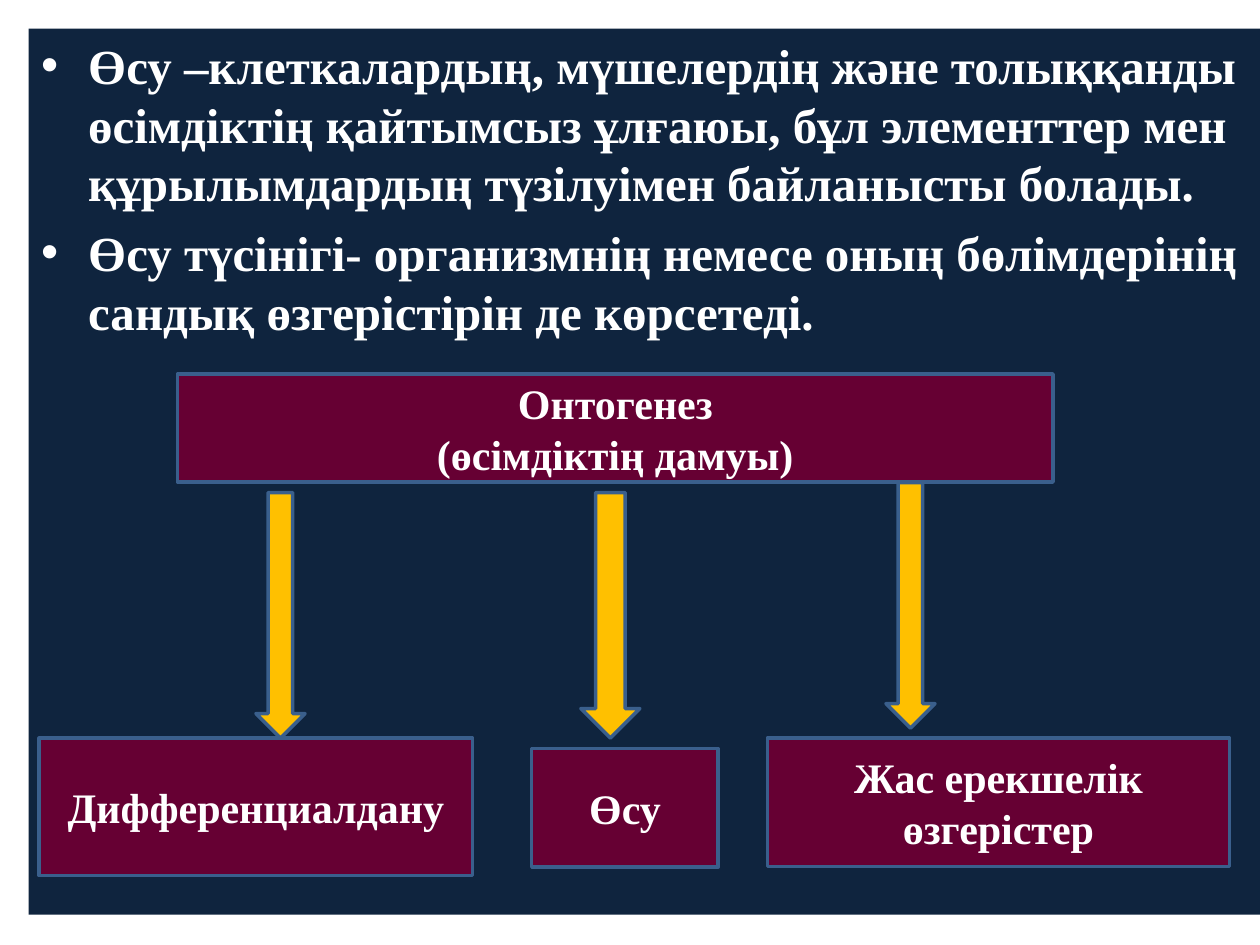
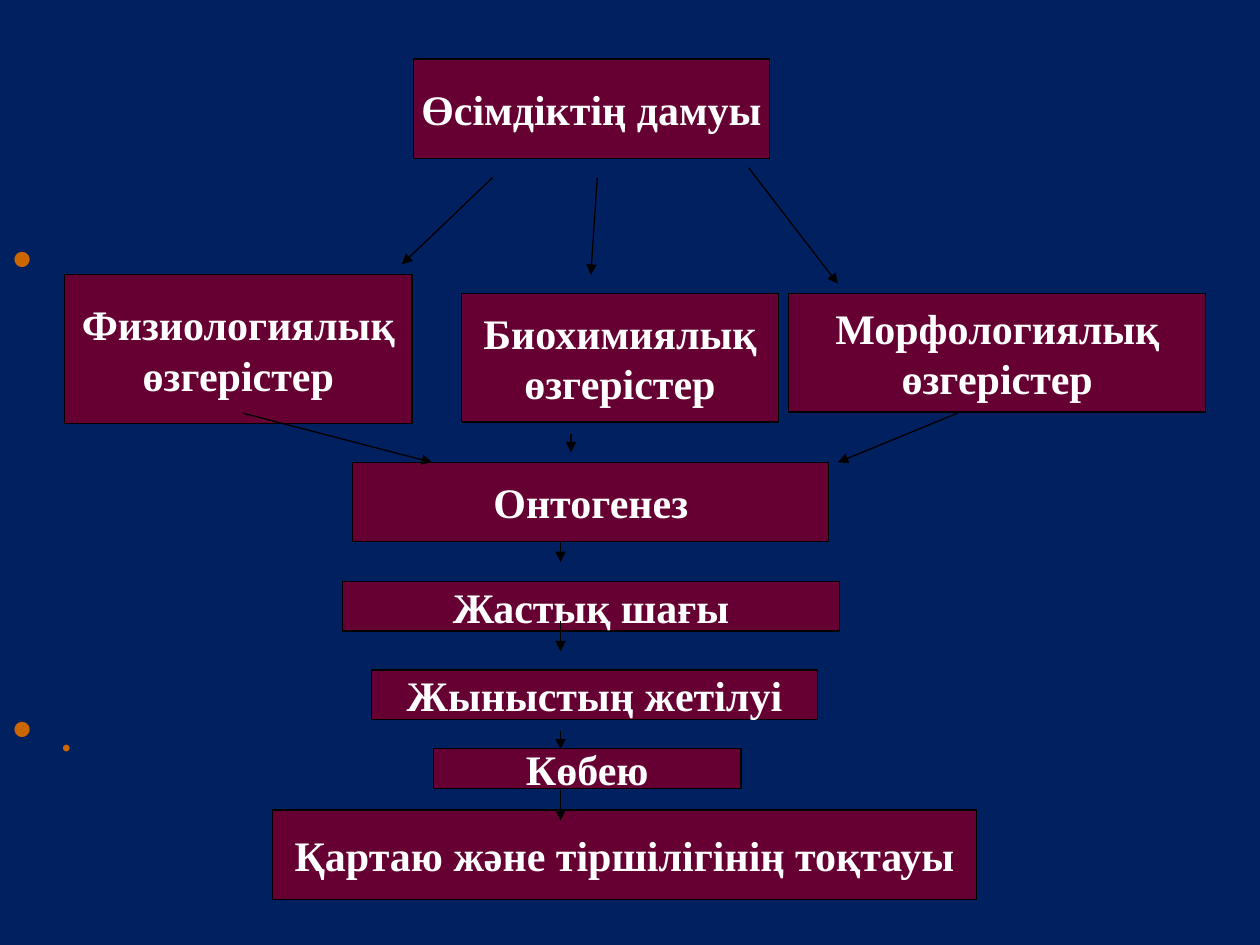
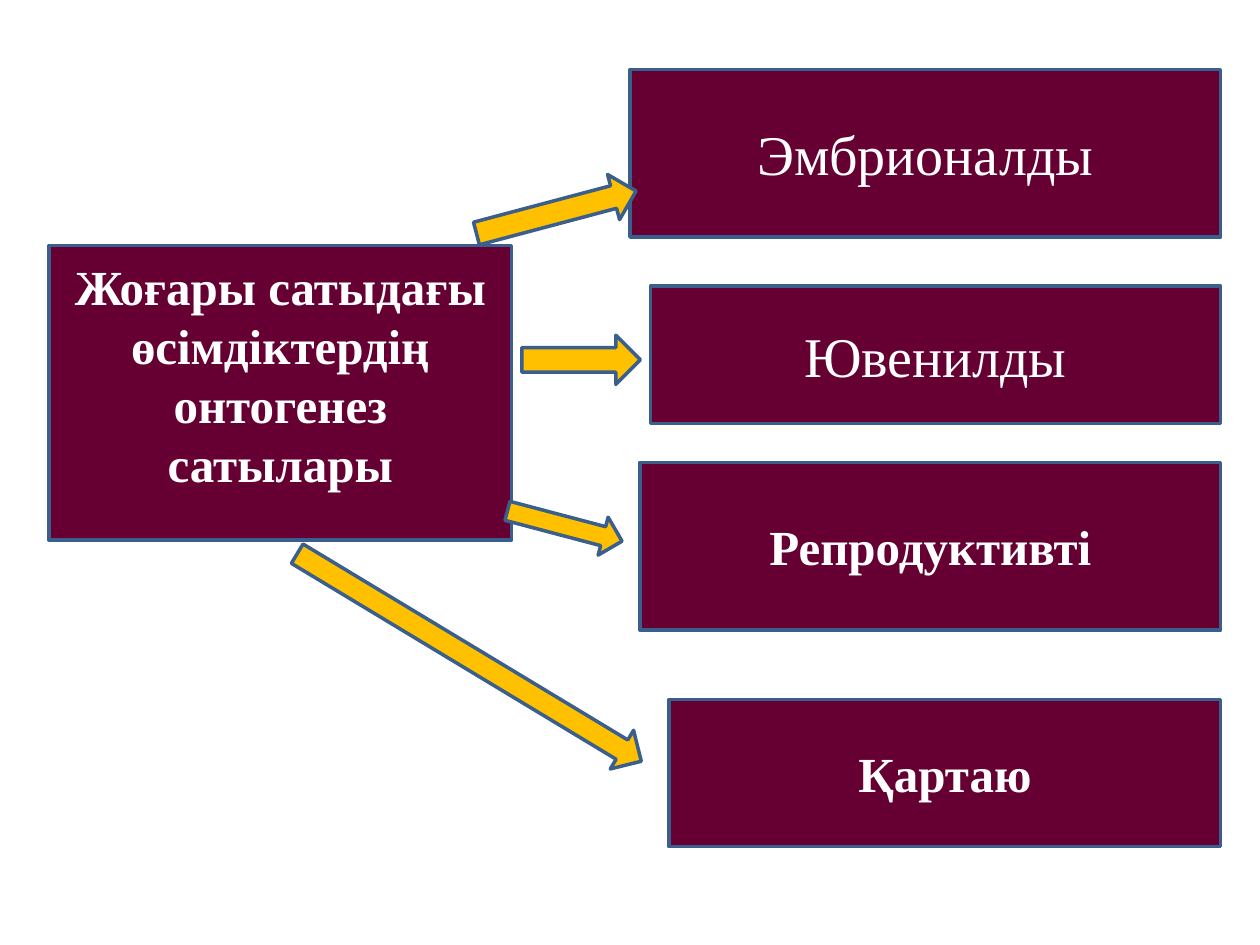
from lxml import etree
from pptx import Presentation
from pptx.dml.color import RGBColor
from pptx.enum.shapes import MSO_CONNECTOR, MSO_SHAPE
from pptx.enum.text import MSO_ANCHOR, PP_ALIGN
from pptx.oxml.ns import qn
from pptx.util import Cm, Pt

SLIDE_WIDTH, SLIDE_HEIGHT = 25.4, 19.05
NAVY = RGBColor(0x0F, 0x24, 0x3E)
DEEP_BLUE = RGBColor(0x00, 0x20, 0x60)
MAROON = RGBColor(0x66, 0x00, 0x33)
AMBER = RGBColor(0xFF, 0xC0, 0x00)
STEEL = RGBColor(0x3A, 0x5F, 0x8C)
ORANGE = RGBColor(0xCC, 0x66, 0x00)
WHITE = RGBColor(0xFF, 0xFF, 0xFF)
BLACK = RGBColor(0x00, 0x00, 0x00)
SERIF, SANS = "Times New Roman", "Calibri"
BULLET_INDENT = Cm(0.95)


def add_figure(slide, preset, box, fill, line=None, line_width=2, rotation=0):
    figure = slide.shapes.add_shape(preset, *map(Cm, box))
    figure.shadow.inherit = False
    figure.fill.solid()
    figure.fill.fore_color.rgb = fill
    if line is None:
        figure.line.fill.background()
    else:
        figure.line.color.rgb = line
        figure.line.width = Pt(line_width)
    figure.rotation = rotation
    return figure


def add_bullet(paragraph):
    properties = paragraph._p.get_or_add_pPr()
    properties.set("marL", str(BULLET_INDENT))
    properties.set("indent", str(-BULLET_INDENT))
    etree.SubElement(properties, qn("a:buFont")).set("typeface", "Arial")
    etree.SubElement(properties, qn("a:buChar")).set("char", "•")


def write(figure, text, size=24, bold=True, font=SERIF, color=WHITE, align=PP_ALIGN.CENTER,
          anchor=MSO_ANCHOR.MIDDLE, wrap=True, bulleted=False, gap=0):
    """Write one paragraph per line of text, with gap points between them."""
    frame = figure.text_frame
    frame.word_wrap = wrap
    frame.vertical_anchor = anchor
    for index, line in enumerate(text.split("\n")):
        paragraph = frame.add_paragraph() if index else frame.paragraphs[0]
        paragraph.alignment = align
        if index and gap:
            paragraph.space_before = Pt(gap)
        if bulleted:
            add_bullet(paragraph)
        run = paragraph.add_run()
        run.text = line
        run.font.name = font
        run.font.size = Pt(size)
        run.font.bold = bold
        run.font.color.rgb = color


def shift(origin, left, top, *size):
    return (origin[0] + left, origin[1] + top, *size)


def add_framed_box(slide, box, text, **text_format):
    framed = add_figure(slide, MSO_SHAPE.RECTANGLE, box, MAROON, STEEL)
    write(framed, text, **text_format)
    return framed


def add_thin_box(slide, box, text):
    thin = add_figure(slide, MSO_SHAPE.RECTANGLE, box, MAROON, BLACK, 0.75)
    write(thin, text, wrap=False)


def add_thin_arrow(slide, start, end):
    arrow = slide.shapes.add_connector(MSO_CONNECTOR.STRAIGHT, *map(Cm, (*start, *end)))
    arrow.line.color.rgb = BLACK
    arrow.line.width = Pt(0.75)
    line = arrow.line._get_or_add_ln()
    etree.SubElement(line, qn("a:tailEnd")).set("type", "triangle")
    etree.SubElement(arrow._element.spPr, qn("a:effectLst"))


def add_bullet_panel(slide, box, fill, text, top_inset=0.13, **text_format):
    panel = add_figure(slide, MSO_SHAPE.RECTANGLE, box, fill)
    panel.text_frame.margin_top = Cm(top_inset)
    write(panel, text, align=PP_ALIGN.LEFT, anchor=MSO_ANCHOR.TOP, bulleted=True, **text_format)


def add_ontogenesis_parts(slide, origin):
    add_framed_box(slide, shift(origin, 2.79, 0, 17.65, 2.18), "Онтогенез\n(өсімдіктің дамуы)")
    parts = [
        ("Дифференциалдану", 0, 7.34, 8.74, 2.77),
        ("Өсу", 9.93, 7.55, 3.76, 2.39),
        ("Жас ерекшелік өзгерістер", 14.68, 7.34, 9.32, 2.59),
    ]
    for text, *box in parts:
        add_framed_box(slide, shift(origin, *box), text)
    for left, top, width in [(4.37, 2.39, 0.99), (10.92, 2.39, 1.19), (17.07, 2.19, 0.99)]:
        add_figure(slide, MSO_SHAPE.DOWN_ARROW, shift(origin, left, top, width, 4.95), AMBER, STEEL)


def add_thin_diagram(slide, origin, boxes, arrows):
    for text, *box in boxes:
        add_thin_box(slide, shift(origin, *box), text)
    for start, end in arrows:
        add_thin_arrow(slide, shift(origin, *start), shift(origin, *end))


def add_development_changes(slide, origin):
    boxes = [
        ("Өсімдіктің дамуы", 7.03, 0, 7.19, 2.01),
        ("Физиологиялық\nөзгерістер", 0, 4.35, 7.01, 3),
        ("Биохимиялық\nөзгерістер", 8, 4.73, 6.4, 2.59),
        ("Морфологиялық\nөзгерістер", 14.6, 4.73, 8.41, 2.39),
    ]
    arrows = [
        ((8.63, 2.39), (6.8, 4.14)),
        ((10.74, 2.39), (10.61, 4.35)),
        ((13.79, 2.19), (15.59, 4.53)),
    ]
    add_thin_diagram(slide, origin, boxes, arrows)


def add_life_stages(slide, origin):
    boxes = [
        ("Онтогенез", 1.62, 0, 9.6, 1.6),
        ("Жастық шағы", 1.42, 2.41, 10.01, 0.99),
        ("Жыныстың жeтiлуi", 2, 4.19, 8.99, 0.99),
        ("Көбею", 3.25, 5.77, 6.2, 0.81),
        ("Қартаю және тiршiлiгiнiң тоқтауы", 0, 7.01, 14.2, 1.8),
    ]
    incoming = [((-0.59, -0.99), (3.22, 0)), ((6.02, -0.58), (6.02, -0.2)),
                ((13.81, -0.99), (11.4, 0))]
    steps = [(1.6, 2.01), (3.2, 3.81), (5.41, 5.79), (6.61, 7.22)]
    descending = [((5.81, top), (5.81, bottom)) for top, bottom in steps]
    add_thin_diagram(slide, origin, boxes, incoming + descending)


def add_higher_plant_stages(slide, origin):
    heading = add_framed_box(slide, shift(origin, 0, 3.55, 9.32, 5.94),
                             "Жоғары сатыдағы өсімдіктердің онтогенез сатылары", size=28)
    heading.text_frame.margin_bottom = Cm(0.86)
    right = 23.62
    stages = [
        ("Эмбрионалды", 11.71, 0, 3.38, 32, False),
        ("Ювенилды", 12.12, 4.37, 2.77, 32, False),
        ("Репродуктивті", 11.91, 7.92, 3.38, 28, True),
        ("Қартаю", 12.5, 12.7, 2.97, 28, True),
    ]
    for text, left, top, height, size, bold in stages:
        add_framed_box(slide, shift(origin, left, top, right - left, height), text,
                       size=size, bold=bold)
    arrows = [
        (345.1, 8.56, 2.41, 3.33, 0.94),
        (0, 9.53, 5.36, 2.39, 0.99),
        (14.8, 9.2, 8.81, 2.39, 0.79),
        (31.1, 4.42, 11.4, 8.1, 0.91),
    ]
    for rotation, *box in arrows:
        add_figure(slide, MSO_SHAPE.RIGHT_ARROW, shift(origin, *box), AMBER, STEEL,
                   rotation=rotation)


def build_growth_slide(slide):
    definitions = (
        "Өсу –клеткалардың, мүшелердің және толыққанды өсімдіктің қайтымсыз ұлғаюы, "
        "бұл элементтер мен құрылымдардың түзілуімен байланысты болады.\n"
        "Өсу түсінігі- организмнің немесе оның бөлімдерінің сандық өзгерістірін де көрсетеді."
    )
    add_bullet_panel(slide, (0.58, 0.58, 24.82, 17.86), NAVY, definitions, size=28, gap=6)
    add_ontogenesis_parts(slide, (0.79, 7.54))


def build_development_slide(slide):
    add_bullet_panel(slide, (0, 0, SLIDE_WIDTH, SLIDE_HEIGHT), DEEP_BLUE, " \n.", top_inset=4.55,
                     size=32, bold=False, font=SANS, color=ORANGE, gap=230)
    add_development_changes(slide, (1.3, 1.19))
    add_life_stages(slide, (5.49, 9.32))


def build_stages_slide(slide):
    add_higher_plant_stages(slide, (0.99, 1.4))


def main():
    deck = Presentation()
    deck.slide_width, deck.slide_height = Cm(SLIDE_WIDTH), Cm(SLIDE_HEIGHT)
    blank = deck.slide_layouts[6]
    for build in (build_growth_slide, build_development_slide, build_stages_slide):
        build(deck.slides.add_slide(blank))
    deck.save("out.pptx")


if __name__ == "__main__":
    main()
